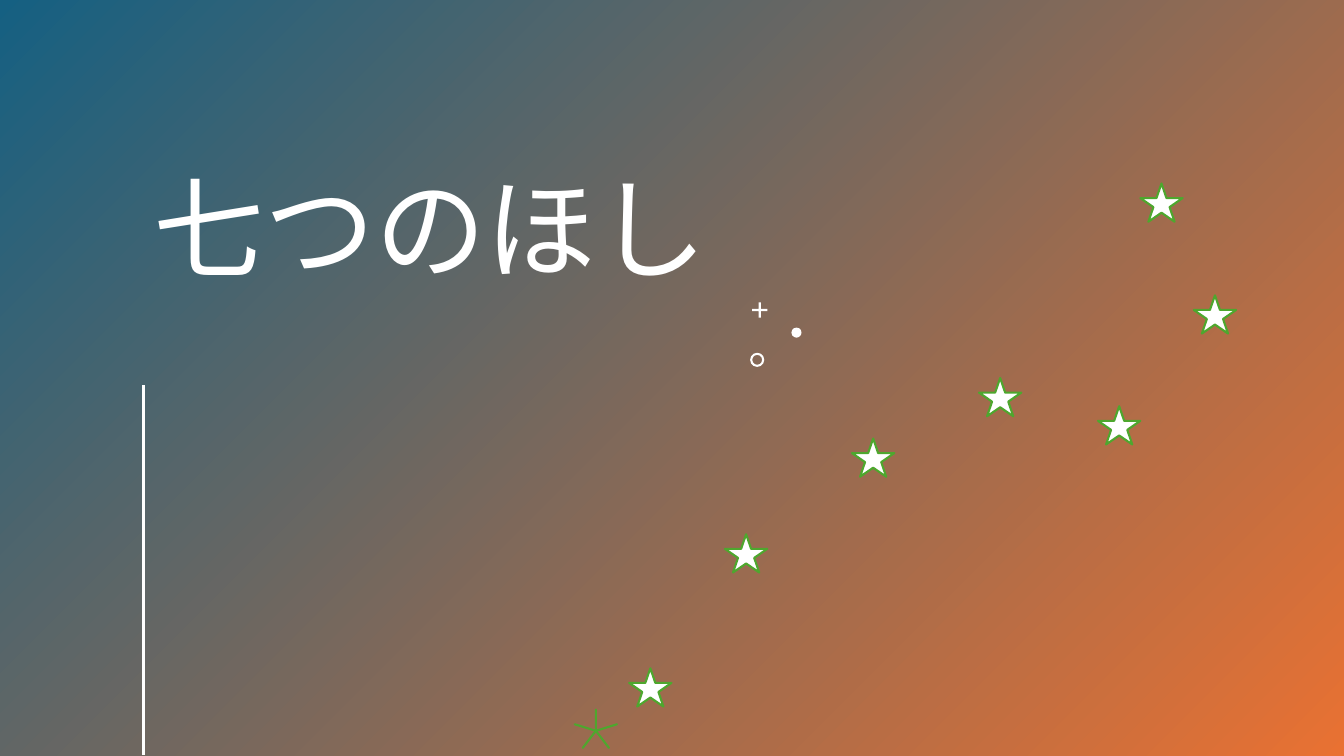
from dataclasses import dataclass
from typing import Optional

from lxml.etree import SubElement
from pptx import Presentation
from pptx.dml.color import RGBColor
from pptx.enum.shapes import MSO_CONNECTOR, MSO_SHAPE
from pptx.enum.text import MSO_ANCHOR, MSO_AUTO_SIZE, PP_ALIGN
from pptx.oxml.ns import qn
from pptx.util import Emu, Pt

SCALE = 9144  # EMU in one px, 100 px to the inch
WIDE, HIGH = 1333, 750
FONT = "Noto Sans CJK JP"
WHITE = RGBColor(0xFF, 0xFF, 0xFF)
GREEN = RGBColor(0x4E, 0xA7, 0x2E)
BLUE = RGBColor(0x15, 0x60, 0x82)
ORANGE = RGBColor(0xE9, 0x71, 0x32)


@dataclass
class Mark:
    kind: MSO_SHAPE
    left: int
    top: int
    width: int
    height: int
    line: Optional[RGBColor] = None
    adjust: Optional[float] = None


def star(left: int, top: int, adjust: Optional[float] = None) -> Mark:
    return Mark(MSO_SHAPE.STAR_5_POINT, left, top, 42, 38, GREEN, adjust)


ACCENTS = [
    Mark(MSO_SHAPE.CROSS, 746, 300, 15, 15, adjust=0.43),
    Mark(MSO_SHAPE.OVAL, 785, 325, 10, 10),
    Mark(MSO_SHAPE.DONUT, 744, 350, 14, 14, adjust=0.15),
]
STARS = [
    star(1131, 182), star(1184, 293), star(1089, 403), star(971, 375),
    star(845, 435), star(719, 530), star(570, 704, 0), star(624, 663),
]


def px(count: int) -> Emu:
    return Emu(count * SCALE)


def draw(shapes, mark: Mark):
    box = (px(n) for n in (mark.left, mark.top, mark.width, mark.height))
    shape = shapes.add_shape(mark.kind, *box)
    shape.shadow.inherit = False
    shape.fill.solid()
    shape.fill.fore_color.rgb = WHITE
    if mark.line is None:
        shape.line.fill.background()
    else:
        shape.line.color.rgb = mark.line
        shape.line.width = Pt(1.5)
    if mark.adjust is not None:
        shape.adjustments[0] = mark.adjust
    return shape


def write(frame, text: str, *, size: float, color: RGBColor, space: float) -> None:
    para = frame.paragraphs[0]
    para.alignment = PP_ALIGN.LEFT
    para.line_spacing = space
    run = para.add_run()
    run.text = text
    run.font.size = Pt(size)
    run.font.color.rgb = color
    run.font.name = FONT
    SubElement(run.font._element, qn("a:ea"), typeface=FONT)


def main() -> None:
    deck = Presentation()
    deck.slide_width, deck.slide_height = px(WIDE), px(HIGH)
    slide = deck.slides.add_slide(deck.slide_layouts[0])
    shapes = slide.shapes
    sub = slide.placeholders[1].element
    sub.getparent().remove(sub)

    # Gradient sky, sent behind the title
    sky = draw(shapes, Mark(MSO_SHAPE.RECTANGLE, 0, 0, WIDE, HIGH))
    sky.fill.gradient()
    sky.fill.gradient_angle = 315
    for stop, color in zip(sky.fill.gradient_stops, (BLUE, ORANGE)):
        stop.color.rgb = color
    shapes.title.element.addprevious(sky.element)

    # Title
    title = shapes.title
    title.left, title.top = px(142), px(65)
    title.width, title.height = px(592), px(310)
    frame = title.text_frame
    frame.word_wrap = True
    frame.auto_size = MSO_AUTO_SIZE.NONE
    frame.vertical_anchor = MSO_ANCHOR.BOTTOM
    frame.margin_bottom = px(83)
    write(frame, "七つのほし", size=79.2, color=WHITE, space=0.9)

    # Small accents
    for mark in ACCENTS:
        draw(shapes, mark)

    # Upright rule
    rule = shapes.add_connector(
        MSO_CONNECTOR.STRAIGHT, px(142), px(382), px(142), px(749))
    rule.line.color.rgb = WHITE
    rule.line.width = Pt(2)
    SubElement(rule.element.spPr, qn("a:effectLst"))

    # Stars
    for mark in STARS:
        draw(shapes, mark)

    deck.save("out.pptx")


if __name__ == "__main__":
    main()
